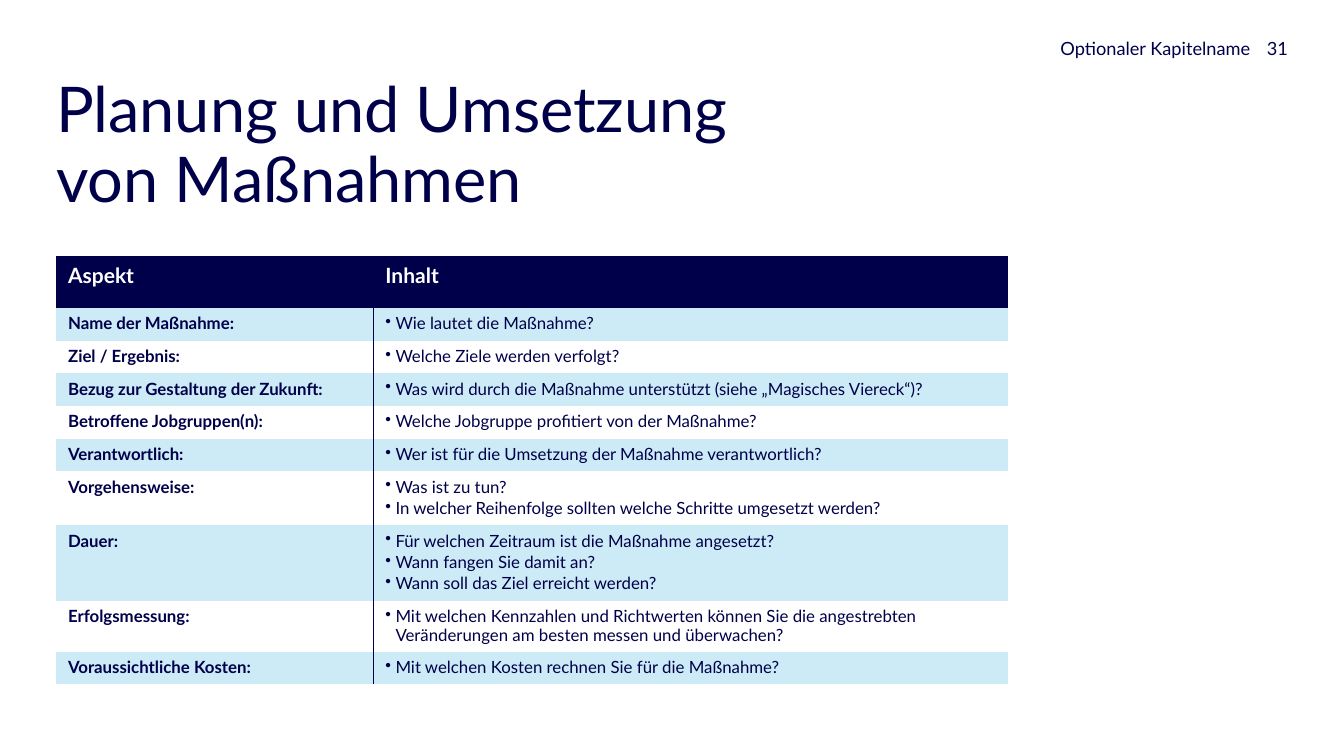
from lxml import etree
from pptx import Presentation, util as u
from pptx.dml.color import RGBColor
from pptx.enum import text
from pptx.oxml import ns

COLORS = {"navy": "00004A", "sky": "CCEBF7", "white": "FFFFFF"}
COLS, ROWS = 24, 15  # slide grid
NO_STYLE = "{2D5ABB26-0587-4C30-8999-92F81FD0307C}"

HEADER = ("Aspekt", "Inhalt")
ASPECTS = [
    ("Name der Maßnahme:", ["Wie lautet die Maßnahme?"]),
    ("Ziel / Ergebnis:", ["Welche Ziele werden verfolgt?"]),
    ("Bezug zur Gestaltung der Zukunft:",
     ["Was wird durch die Maßnahme unterstützt (siehe „Magisches Viereck“)?"]),
    ("Betroffene Jobgruppen(n):", ["Welche Jobgruppe profitiert von der Maßnahme?"]),
    ("Verantwortlich:", ["Wer ist für die Umsetzung der Maßnahme verantwortlich?"]),
    ("Vorgehensweise:",
     ["Was ist zu tun?",
      "In welcher Reihenfolge sollten welche Schritte umgesetzt werden?"]),
    ("Dauer:",
     ["Für welchen Zeitraum ist die Maßnahme angesetzt?",
      "Wann fangen Sie damit an?",
      "Wann soll das Ziel erreicht werden?"]),
    ("Erfolgsmessung:",
     ["Mit welchen Kennzahlen und Richtwerten können Sie die angestrebten "
      "Veränderungen am besten messen und überwachen?"]),
    ("Voraussichtliche Kosten:", ["Mit welchen Kosten rechnen Sie für die Maßnahme?"]),
]


class Deck:
    """Holds the style and the current slide."""

    font = "Lato"
    spacing = 0.92

    def __init__(self, width, height):
        self.prs = Presentation()
        self.prs.slide_width, self.prs.slide_height = u.Inches(width), u.Inches(height)
        self.s = self.prs.slides.add_slide(self.prs.slide_layouts[5])

    def box(self, col, row, cols, rows):
        w, h = self.prs.slide_width / COLS, self.prs.slide_height / ROWS
        return [u.Emu(round(v)) for v in (col * w, row * h, cols * w, rows * h)]

    def run(self, p, words, size, color="navy", bold=False):
        r = p.add_run()
        r.text = words
        r.font.name, r.font.size, r.font.bold = self.font, u.Pt(size), bold
        r.font.color.rgb = RGBColor.from_string(COLORS[color])

    def frame(self, tf, anchor):
        tf.word_wrap = True
        tf.auto_size = text.MSO_AUTO_SIZE.NONE
        tf.vertical_anchor = anchor
        tf.margin_left = tf.margin_right = tf.margin_top = tf.margin_bottom = 0

    def title(self, lines, *grid):
        sp = self.s.shapes.title
        sp.left, sp.top, sp.width, sp.height = self.box(*grid)
        self.frame(sp.text_frame, text.MSO_ANCHOR.TOP)
        p = sp.text_frame.paragraphs[0]
        p.alignment, p.line_spacing = text.PP_ALIGN.LEFT, self.spacing
        for i, line in enumerate(lines):
            if i:
                p.add_line_break()
            self.run(p, line, 90)

    def header_note(self, words, *grid):
        sp = self.s.shapes.add_textbox(*self.box(*grid))
        self.frame(sp.text_frame, text.MSO_ANCHOR.BOTTOM)
        p = sp.text_frame.paragraphs[0]
        p.alignment = text.PP_ALIGN.RIGHT
        self.run(p, words, 26)

    def bullet(self, p):
        pPr = p._p.get_or_add_pPr()
        pPr.set("marL", str(u.Inches(0.2)))
        pPr.set("indent", str(-u.Inches(0.2)))
        etree.SubElement(pPr, ns.qn("a:buChar")).set("char", "•")

    def divider(self, cell, side):
        ln = etree.Element(ns.qn(f"a:{side}"), w=str(u.Pt(0.75)))
        fill = etree.SubElement(ln, ns.qn("a:solidFill"))
        etree.SubElement(fill, ns.qn("a:srgbClr")).set("val", COLORS["navy"])
        cell._tc.get_or_add_tcPr().insert(0, ln)

    def cell(self, cell, fill, bottom=0.14):
        cell.fill.solid()
        cell.fill.fore_color.rgb = RGBColor.from_string(COLORS[fill])
        cell.margin_left, cell.margin_right = u.Inches(0.24), u.Inches(0.16)
        cell.margin_top, cell.margin_bottom = u.Inches(0.14), u.Inches(bottom)
        return cell.text_frame

    def body_text(self, tf, items, bold=False, bulleted=False):
        for i, item in enumerate(items):
            p = tf.add_paragraph() if i else tf.paragraphs[0]
            if bulleted:
                self.bullet(p)
            p.line_spacing, p.space_after = self.spacing, u.Pt(4)
            self.run(p, item, 24, bold=bold)

    def table(self, header, rows, *grid):
        x, y, w, h = self.box(*grid)
        t = self.s.shapes.add_table(len(rows) + 1, 2, x, y, w, h).table
        t._tbl.tblPr.find(ns.qn("a:tableStyleId")).text = NO_STYLE
        t.columns[0].width, t.columns[1].width = w // 3, w - w // 3

        # Header row
        t.rows[0].height = u.Inches(1.02)
        for c, words in enumerate(header):
            tf = self.cell(t.cell(0, c), "navy", bottom=0.39)
            self.run(tf.paragraphs[0], words, 30, "white", True)

        # Banded body rows, as tall as their lines
        for n, (aspect, items) in enumerate(rows, 1):
            t.rows[n].height = u.Inches(0.22 + 0.42 * len(items))
            fill = "sky" if n % 2 else "white"
            self.body_text(self.cell(t.cell(n, 0), fill), [aspect], bold=True)
            self.body_text(self.cell(t.cell(n, 1), fill), items, bulleted=True)

        # Line between the columns
        for n in range(len(rows) + 1):
            self.divider(t.cell(n, 0), "lnR")
            self.divider(t.cell(n, 1), "lnL")


def main():
    deck = Deck(26.66, 15)

    # Title and page header
    deck.title(["Planung und Umsetzung", "von Maßnahmen"], 1, 1.53, 22, 2.99)
    deck.header_note("31", 22.33, 0, 0.67, 1.18)
    deck.header_note("Optionaler Kapitelname", 1, 0, 21.33, 1.18)

    # Planning table
    deck.table(HEADER, ASPECTS, 1, 5.08, 17, 8.46)

    deck.prs.save("out.pptx")


if __name__ == "__main__":
    main()
